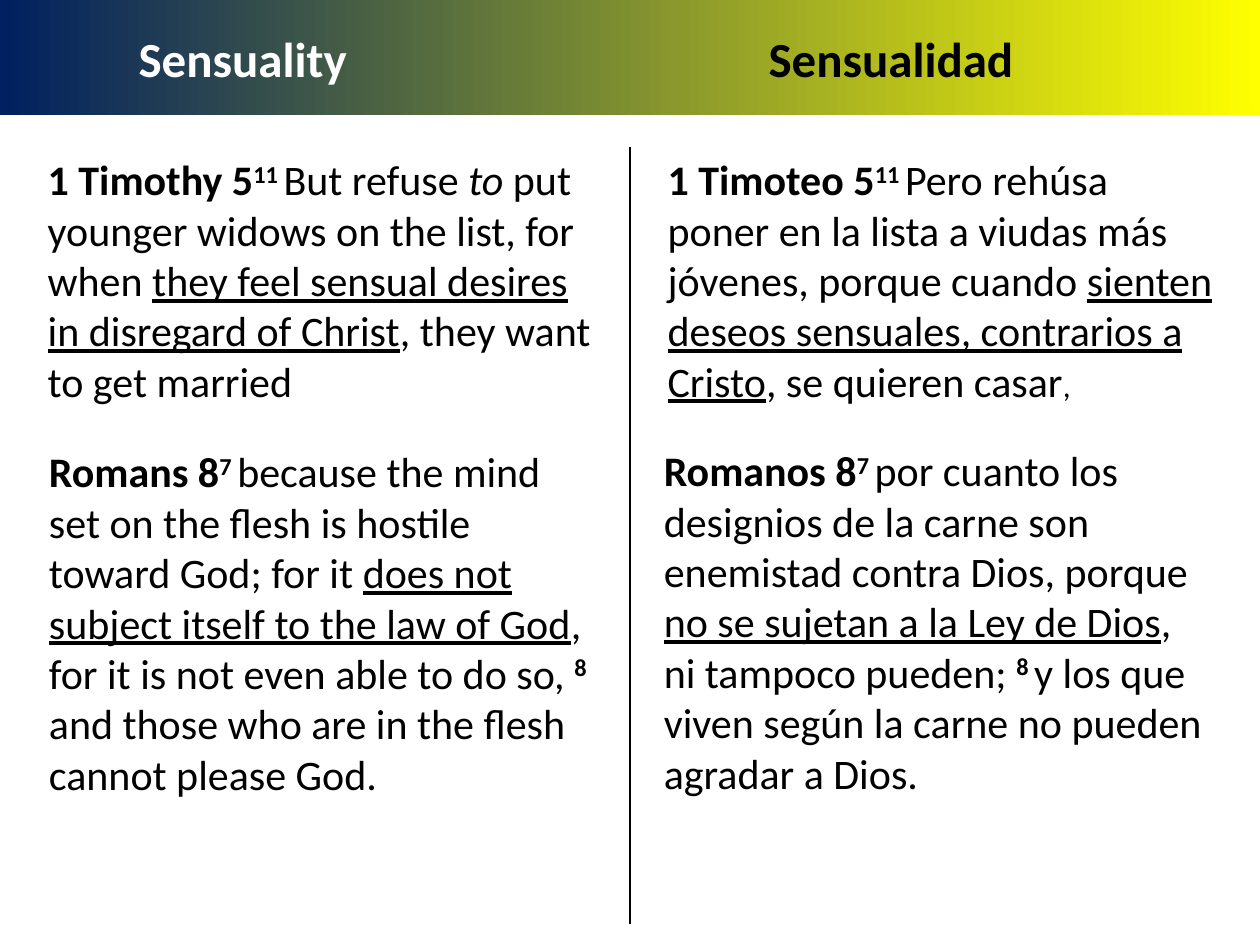
from lxml import etree
from pptx import Presentation
from pptx.dml.color import RGBColor
from pptx.enum.shapes import MSO_CONNECTOR
from pptx.enum.text import MSO_ANCHOR, MSO_AUTO_SIZE, PP_ALIGN
from pptx.oxml.ns import qn
from pptx.util import Pt

STRAIGHT = MSO_CONNECTOR.STRAIGHT
MIDDLE = MSO_ANCHOR.MIDDLE
LEFT = PP_ALIGN.LEFT
NO_AUTOFIT = MSO_AUTO_SIZE.NONE
TITLE_ONLY = 5
FONT = "Calibri"
BLACK = "000000"
WHITE = "FFFFFF"
NAVY = "002060"
YELLOW = "FFFF00"

HEADINGS = [("\tSensuality", WHITE), ("\tSensualidad", BLACK)]
HEADING_STOPS = [72, 432]

TIMOTHY = [
    ("1 Timothy 5", "bold"),
    ("11 ", "verse"),
    ("But refuse ", "plain"),
    ("to ", "italic"),
    ("put younger widows on the list, for when ", "plain"),
    ("they feel sensual desires in disregard of Christ", "underline"),
    (", they want to get married", "plain"),
]
TIMOTEO = [
    ("1 Timoteo 5", "bold"),
    ("11 ", "verse"),
    ("Pero rehúsa poner en la lista a viudas más jóvenes, porque cuando ", "plain"),
    ("sienten deseos sensuales, contrarios a Cristo", "underline"),
    (", se quieren casar", "plain"),
    (",", "small"),
]
ROMANS = [
    ("Romans 8", "bold"),
    ("7 ", "verse"),
    ("because the mind set on the flesh is hostile toward God; for it ", "plain"),
    ("does not subject itself to the law of God", "underline"),
    (", for it is not even able to do so, ", "plain"),
    ("8 ", "verse"),
    ("and those who are in the flesh cannot please God.", "plain"),
]
ROMANOS = [
    ("Romanos 8", "bold"),
    ("7 ", "verse"),
    ("por cuanto los designios de la carne son enemistad contra Dios, porque ", "plain"),
    ("no se sujetan a la Ley de Dios", "underline"),
    (", ni tampoco pueden; ", "plain"),
    ("8 ", "verse"),
    ("y los que viven según la carne no pueden agradar a Dios.", "plain"),
]
PASSAGES = [
    (TIMOTHY, (20.16, 84.24, 327.6, 152.64)),
    (TIMOTEO, (374.4, 84.24, 327.6, 152.64)),
    (ROMANS, (20.88, 251.28, 327.6, 210.96)),
    (ROMANOS, (372.24, 250.56, 327.6, 210.96)),
]


def color(value):
    """Turn a hex string into a colour."""
    return RGBColor.from_string(value)


def add_span(para, text, size, value):
    """Append a run in the slide's font and return it."""
    span = para.add_run()
    span.text = text
    span.font.name = FONT
    span.font.size = Pt(size)
    span.font.color.rgb = color(value)
    return span


def add_banner(page, box):
    """Place the title as a gradient banner with one heading per column."""
    title = page.shapes.title
    title.left, title.top, title.width, title.height = map(Pt, box)
    title.fill.gradient()
    title.fill.gradient_angle = 0
    for stop, value in zip(title.fill.gradient_stops, [NAVY, YELLOW]):
        stop.color.rgb = color(value)
    frame = title.text_frame
    frame.auto_size = NO_AUTOFIT
    frame.vertical_anchor = MIDDLE
    para = frame.paragraphs[0]
    para.alignment = LEFT
    tabs = etree.SubElement(para._p.get_or_add_pPr(), qn("a:tabLst"))
    for position in HEADING_STOPS:
        etree.SubElement(tabs, qn("a:tab"), pos=str(Pt(position)), algn="l")
    for text, value in HEADINGS:
        add_span(para, text, 28, value).font.bold = True


def add_divider(page, box):
    """Draw the vertical rule between the two languages."""
    left, top, width, height = box
    line = page.shapes.add_connector(
        STRAIGHT, Pt(left), Pt(top), Pt(left + width), Pt(top + height))
    line.line.color.rgb = color(BLACK)
    line.line.width = Pt(1)
    etree.SubElement(line._element.spPr, qn("a:effectLst"))


def add_passage(page, box, passage):
    """Write one Bible passage from its styled pieces."""
    frame = page.shapes.add_textbox(*map(Pt, box)).text_frame
    frame.word_wrap = True
    para = frame.paragraphs[0]
    for text, style in passage:
        span = add_span(para, text, 18 if style == "small" else 24, BLACK)
        span.font.bold = style in ("bold", "verse")
        span.font.italic = style == "italic"
        span.font.underline = style == "underline"
        if style == "verse":
            span._r.get_or_add_rPr().set("baseline", "30000")


def main():
    """Build the bilingual slide and save it."""
    deck = Presentation()
    deck.slide_width, deck.slide_height = Pt(720), Pt(540)
    page = deck.slides.add_slide(deck.slide_layouts[TITLE_ONLY])
    add_banner(page, (0, 0, 720, 66))
    add_divider(page, (360, 84.24, 0, 443.52))
    for passage, box in PASSAGES:
        add_passage(page, box, passage)
    deck.save("out.pptx")


if __name__ == "__main__":
    main()
